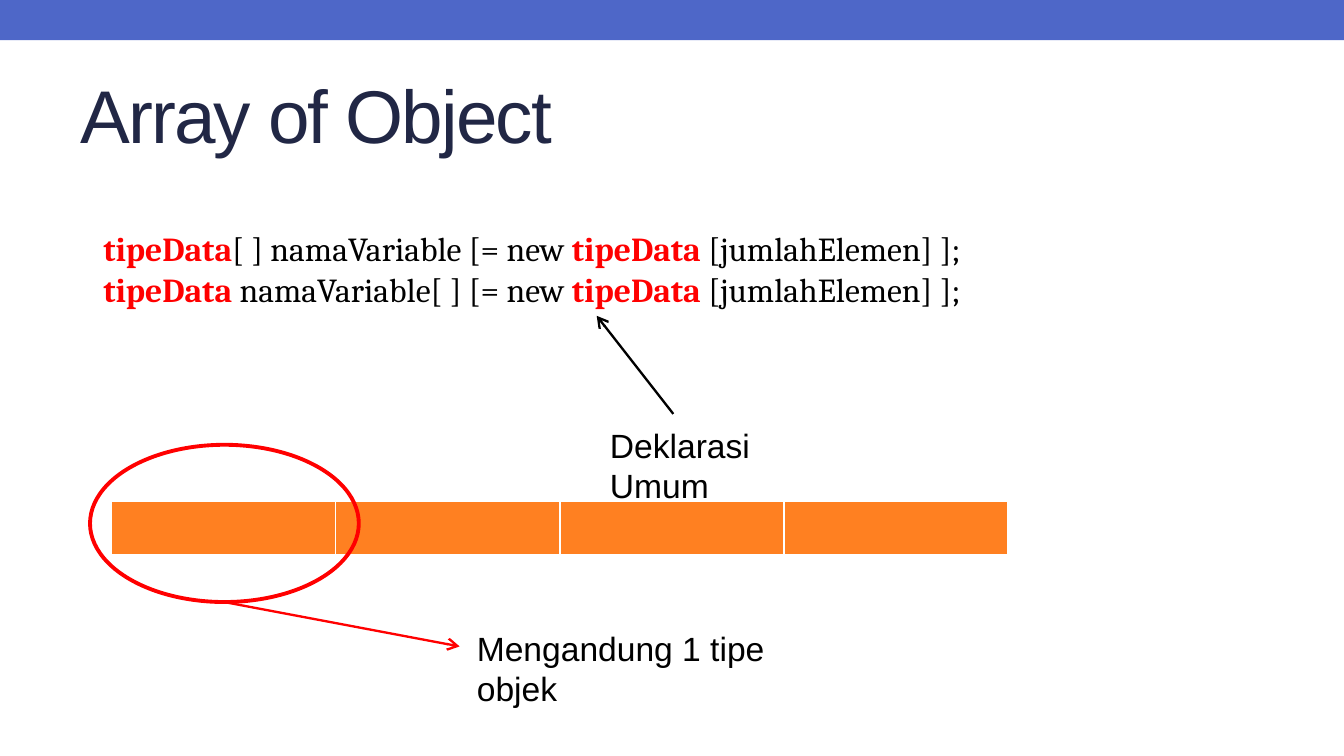
from lxml.etree import SubElement
from pptx import Presentation
from pptx.dml.color import RGBColor
from pptx.enum.shapes import MSO_CONNECTOR, MSO_SHAPE
from pptx.enum.text import MSO_ANCHOR
from pptx.oxml.ns import qn
from pptx.util import Inches, Pt

HUES = {"bar": "4E67C8", "title": "212745", "red": "FF0000",
        "black": "000000", "cell": "FF8021", "white": "FFFFFF"}
HUES = {name: RGBColor.from_string(code) for name, code in HUES.items()}


def add_text(box, lines, size, font, hue):
    """Add a text box; each line is a list of (text, is key word) pairs."""
    frame = slide.shapes.add_textbox(*map(Inches, box)).text_frame
    frame.word_wrap = True
    for i, line in enumerate(lines):
        para = frame.paragraphs[0] if i == 0 else frame.add_paragraph()
        for text, key in line:
            run = para.add_run()
            run.text = text
            run.font.size = Pt(size)
            run.font.name = font
            run.font.bold = key
            run.font.color.rgb = HUES["red" if key else hue]
    return frame


def add_arrow(start, end, hue):
    ends = map(Inches, start + end)
    line = slide.shapes.add_connector(MSO_CONNECTOR.STRAIGHT, *ends)
    line.line.color.rgb = HUES[hue]
    line.line.width = Pt(1.25)
    SubElement(line.line._get_or_add_ln(), qn("a:tailEnd"), type="arrow")
    SubElement(line._element.spPr, qn("a:effectLst"))


# Slide in 16:9
deck = Presentation()
deck.slide_width = Inches(10)
deck.slide_height = Inches(10) * 9 // 16
slide = deck.slides.add_slide(deck.slide_layouts[6])

# Top bar
bar = slide.shapes.add_shape(MSO_SHAPE.RECTANGLE, 0, 0, Inches(10), Inches(0.3))
bar.shadow.inherit = False
bar.fill.solid()
bar.fill.fore_color.rgb = HUES["bar"]
bar.line.fill.background()

# Title
title = add_text((0.5, 0.44, 9, 0.81), [[("Array of Object", False)]],
                 40, "Arial", "title")
title.vertical_anchor = MSO_ANCHOR.MIDDLE
title.paragraphs[0].runs[0].font._element.set("spc", "-100")

# Declaration syntax, key type in red
code = [
    [("tipeData", True), ("[ ] namaVariable [= new ", False),
     ("tipeData", True), (" [jumlahElemen] ];", False)],
    [("tipeData ", True), ("namaVariable[ ] [= new ", False),
     ("tipeData ", True), ("[jumlahElemen] ];", False)],
]
add_text((0.67, 1.65, 7.55, 0.71), code, 18, "Cambria", "black")

# Note on the declaration
add_arrow((5.01, 3.08), (4.44, 2.35), "black")
add_text((4.44, 3.11, 2.02, 0.4), [[("Deklarasi Umum", False)]],
         18, "Arial", "black")

# Array cells
grid = slide.shapes.add_table(1, 4, Inches(0.83), Inches(3.73),
                              Inches(6.67), Inches(0.41)).table
for cell in grid.iter_cells():
    props = cell._tc.get_or_add_tcPr()
    for side, width in (("L", 1), ("R", 1), ("T", 1), ("B", 3)):
        edge = SubElement(props, qn(f"a:ln{side}"), w=str(Pt(width)))
        fill = SubElement(edge, qn("a:solidFill"))
        SubElement(fill, qn("a:srgbClr"), val=str(HUES["white"]))
    cell.fill.solid()
    cell.fill.fore_color.rgb = HUES["cell"]

# Ring around the first cell
ring = slide.shapes.add_shape(MSO_SHAPE.OVAL, Inches(0.67), Inches(3.31),
                              Inches(2), Inches(1.17))
ring.shadow.inherit = False
ring.fill.background()
ring.line.color.rgb = HUES["red"]
ring.line.width = Pt(2.08)

# Note on the cell
add_arrow((1.67, 4.48), (3.42, 4.81), "red")
add_text((3.45, 4.62, 2.97, 0.4), [[("Mengandung 1 tipe objek", False)]],
         18, "Arial", "black")

deck.save("out.pptx")
